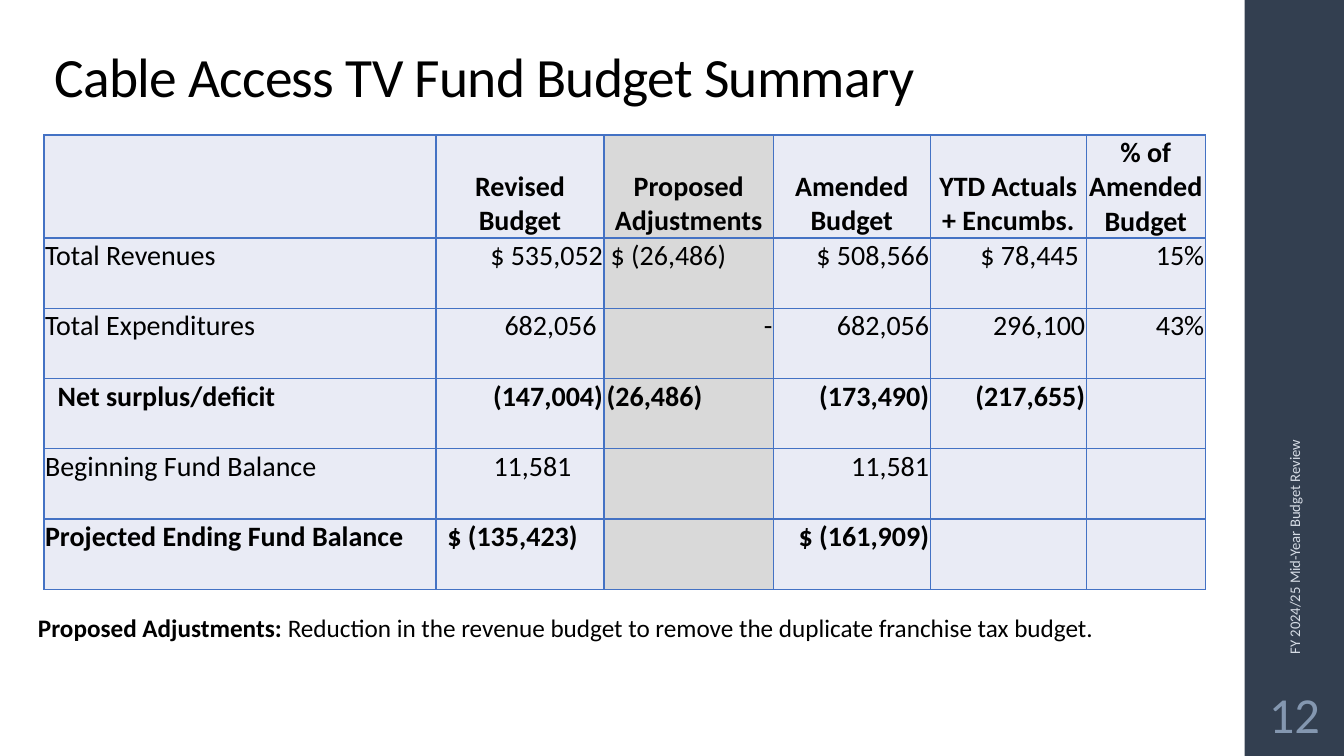
from lxml import etree
from pptx import Presentation
from pptx.dml.color import RGBColor
from pptx.enum import shapes, text
from pptx.oxml import ns
from pptx.util import Pt

BLACK = RGBColor(0, 0, 0)
NAVY = RGBColor(0x33, 0x3F, 0x50)
PALE = RGBColor(0xD6, 0xDC, 0xE5)
STEEL = RGBColor(0x84, 0x97, 0xB0)
LILAC = RGBColor(0xE9, 0xEB, 0xF5)
GREY = RGBColor(0xD9, 0xD9, 0xD9)
BLUE = RGBColor(0x44, 0x72, 0xC4)
LEFT, MID, RIGHT = (text.PP_ALIGN.LEFT, text.PP_ALIGN.CENTER,
                    text.PP_ALIGN.RIGHT)
TOP, CENTRE, BASE = (text.MSO_ANCHOR.TOP, text.MSO_ANCHOR.MIDDLE,
                     text.MSO_ANCHOR.BOTTOM)

WIDTHS = [280, 120, 121, 112, 111.5, 85]
HEAD_H, ROW_H = 73.5, 50.2
HEADS = ["", "Revised Budget", "Proposed Adjustments", "Amended Budget",
         "YTD Actuals + Encumbs.", "% of Amended Budget"]
ROWS = [
    ["Total Revenues", "$ 535,052", "$ (26,486)", "$ 508,566", "$ 78,445", "15%"],
    ["Total Expenditures", "682,056", "-", "682,056", "296,100", "43%"],
    ["Net surplus/deficit", "(147,004)", "(26,486)", "(173,490)", "(217,655)", ""],
    ["Beginning Fund Balance", "11,581", "", "11,581", "", ""],
    ["Projected Ending Fund Balance", "$ (135,423)", "", "$ (161,909)", "", ""],
]
BOLD = {0, 3, 5}
ADJUST = 2  # shaded column
# Extra inner margin in points, by (row, column)
INSET = {(1, 2): 33, (1, 4): 4.5, (2, 1): 4.5, (3, 0): 9, (3, 2): 50,
         (4, 1): 22.5, (5, 1): 18}


def write(frame, words, size=20, color=BLACK, bold=False, align=LEFT):
    """Add one run to the first paragraph of a text frame."""
    para = frame.paragraphs[0]
    para.alignment = align
    run = para.add_run()
    run.text = words
    font = run.font
    font.name, font.size, font.bold = "Calibri", Pt(size), bold
    font.color.rgb = color
    return run


def text_box(slide, box, anchor=TOP):
    shape = slide.shapes.add_textbox(*map(Pt, box))
    frame = shape.text_frame
    frame.word_wrap = True
    frame.vertical_anchor = anchor
    return shape


def add_title(slide, box):
    title = slide.shapes.title
    title.left, title.top, title.width, title.height = map(Pt, box)
    frame = title.text_frame
    frame.auto_size = text.MSO_AUTO_SIZE.NONE
    frame.vertical_anchor = BASE
    run = write(frame, "Cable Access TV Fund Budget Summary", size=39.6)
    run.font._element.set("spc", "-50")
    frame.paragraphs[0].line_spacing = 0.9


def add_band(slide, box):
    x, y, w, h = box
    band = slide.shapes.add_shape(shapes.MSO_SHAPE.RECTANGLE, *map(Pt, box))
    band.shadow.inherit = False
    band.fill.solid()
    band.fill.fore_color.rgb = NAVY
    band.line.fill.background()

    # Vertical footer, centred on the band
    long, thick = 282, 29
    foot = text_box(slide, (x + (w - long) / 2, y + 319, long, thick), CENTRE)
    foot.rotation = 270
    write(foot.text_frame, "FY 2024/25 Mid-Year Budget Review", 10.5, PALE)

    # Slide number
    num = text_box(slide, (x, y + h - 54, w, 47), CENTRE)
    write(num.text_frame, "12", 36, STEEL, align=MID)


def edge(cell):
    """Draw a one-point border on all four sides."""
    props = cell._tc.get_or_add_tcPr()
    for spot, side in enumerate(("lnL", "lnR", "lnT", "lnB")):
        line = etree.Element(ns.qn("a:" + side), w=str(Pt(1)))
        fill = etree.SubElement(line, ns.qn("a:solidFill"))
        etree.SubElement(fill, ns.qn("a:srgbClr"), val=str(BLUE))
        props.insert(spot, line)


def add_budget(slide, x, y):
    height = HEAD_H + ROW_H * len(ROWS)
    table = slide.shapes.add_table(
        len(ROWS) + 1, len(WIDTHS),
        Pt(x), Pt(y), Pt(sum(WIDTHS)), Pt(height)).table
    table.first_row = table.horz_banding = False
    for col, width in zip(table.columns, WIDTHS):
        col.width = Pt(width)
    for r, values in enumerate([HEADS] + ROWS):
        table.rows[r].height = Pt(ROW_H if r else HEAD_H)
        for c, words in enumerate(values):
            cell = table.cell(r, c)
            cell.fill.solid()
            cell.fill.fore_color.rgb = GREY if c == ADJUST else LILAC
            edge(cell)
            extra = INSET.get((r, c), 0)
            cell.margin_left = Pt(0.7 + (0 if c else extra))
            cell.margin_right = Pt(0.7 + (extra if c else 0))
            cell.margin_top, cell.margin_bottom = Pt(0.7), Pt(0)
            cell.vertical_anchor = TOP if r else BASE
            if words:
                align = MID if r == 0 else RIGHT if c else LEFT
                write(cell.text_frame, words, bold=r in BOLD, align=align)


def add_note(slide, box):
    frame = text_box(slide, box).text_frame
    write(frame, "Proposed Adjustments: ", 18, bold=True)
    write(frame, "Reduction in the revenue budget to remove the duplicate "
                 "franchise tax budget.", 18)


def main():
    deck = Presentation()
    deck.slide_width, deck.slide_height = Pt(960), Pt(540)
    slide = deck.slides.add_slide(deck.slide_layouts[5])
    add_band(slide, (889, 0, 71, 540))
    add_title(slide, (31.7, 37.5, 763, 44))
    add_budget(slide, 31.5, 96.5)
    add_note(slide, (20, 434, 857.5, 29))
    deck.save("out.pptx")


if __name__ == "__main__":
    main()
